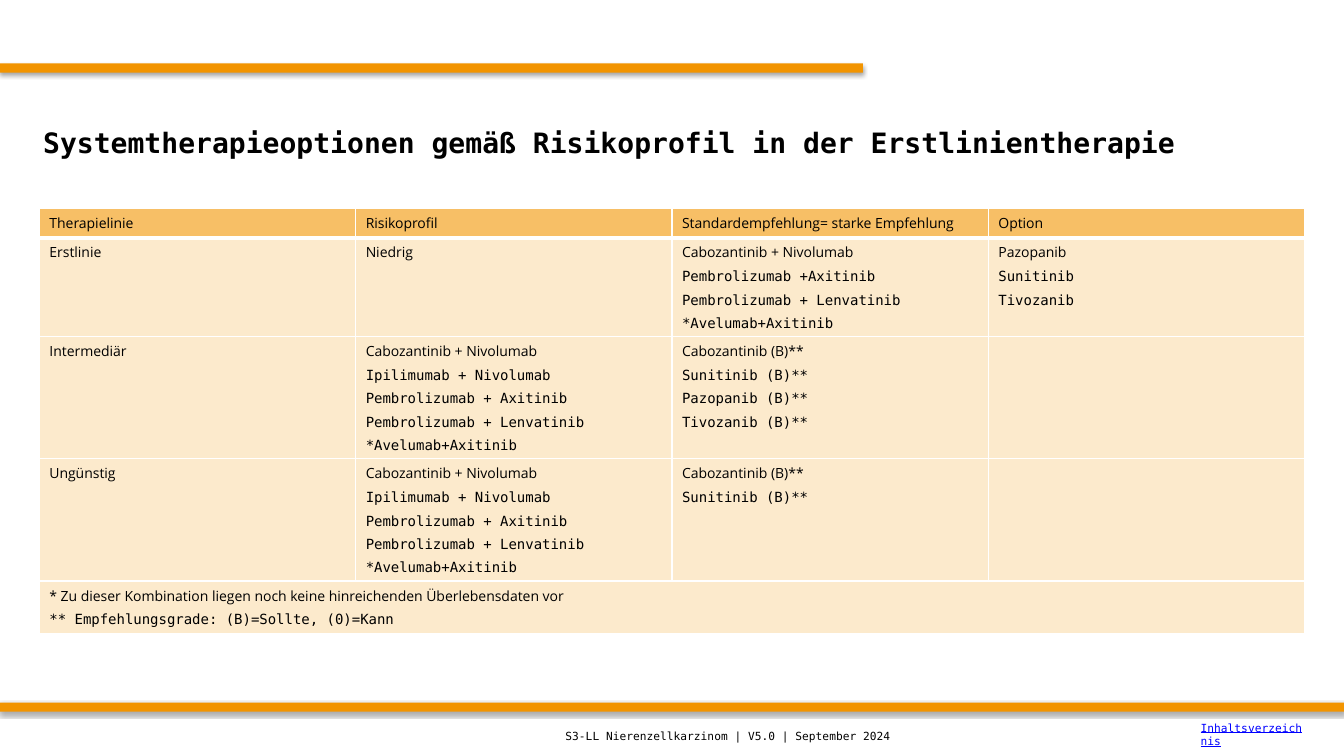
"""Build the slide on first-line systemic therapy options by risk profile."""
from dataclasses import dataclass

from lxml import etree
from pptx import Presentation
from pptx.dml.color import RGBColor
from pptx.enum.shapes import MSO_SHAPE
from pptx.enum.text import MSO_ANCHOR
from pptx.oxml.ns import qn
from pptx.util import Inches, Pt

RECT = MSO_SHAPE.RECTANGLE
MIDDLE = MSO_ANCHOR.MIDDLE


@dataclass(frozen=True)
class Theme:
    bar: str = "F29400"
    header: str = "F7BF66"
    body: str = "FCEACC"
    border: str = "FFFFFF"
    text: str = "000000"
    link: str = "0000FF"
    sans: str = "Open Sans"
    mono: str = "DejaVu Sans Mono"
    title_size: int = 20
    table_size: int = 10
    footer_size: int = 8


theme = Theme()


def add_run(p, text, font, size, color=theme.text):
    r = p.add_run()
    r.text = text
    r.font.name = font
    r.font.size = Pt(size)
    r.font.color.rgb = RGBColor.from_string(color)
    return r


def set_border(cell, side, width):
    ln = etree.SubElement(cell._tc.get_or_add_tcPr(), qn(f"a:{side}"), w=str(Pt(width)))
    fill = etree.SubElement(ln, qn("a:solidFill"))
    etree.SubElement(fill, qn("a:srgbClr"), val=theme.border)


prs = Presentation()
prs.slide_width = Inches(13.33)
prs.slide_height = Inches(7.5)
s = prs.slides.add_slide(prs.slide_layouts[6])

for top, width in [(0.63, 8.56), (6.97, 13.33)]:
    sp = s.shapes.add_shape(RECT, 0, Inches(top), Inches(width), Inches(0.09))
    sp.fill.solid()
    sp.fill.fore_color.rgb = RGBColor.from_string(theme.bar)
    sp.line.fill.background()
    sp.shadow.inherit = False
    effects = sp._element.spPr.find(qn("a:effectLst"))
    shadow = etree.SubElement(effects, qn("a:outerShdw"), blurRad=str(Pt(3.1)),
                              dist=str(Pt(1.8)), dir="5400000", rotWithShape="0")
    black = etree.SubElement(shadow, qn("a:srgbClr"), val=theme.text)
    etree.SubElement(black, qn("a:alpha"), val="35000")

labels = [
    ("Systemtherapieoptionen gemäß Risikoprofil in der Erstlinientherapie",
     (0.33, 0.83, 12.67, 1.17), theme.title_size, theme.text, True, False),
    ("S3-LL Nierenzellkarzinom | V5.0 | September 2024",
     (5.51, 7.11, 5.51, 0.39), theme.footer_size, theme.text, False, False),
    ("Inhaltsverzeichnis",
     (11.81, 7.09, 1.22, 0.39), theme.footer_size, theme.link, False, True),
]
for text, box, size, color, bold, underline in labels:
    tf = s.shapes.add_textbox(*map(Inches, box)).text_frame
    tf.word_wrap = True
    tf.vertical_anchor = MIDDLE
    r = add_run(tf.paragraphs[0], text, theme.mono, size, color)
    r.font.bold = bold
    r.font.underline = underline

combinations = ["Cabozantinib + Nivolumab", "Ipilimumab + Nivolumab",
                "Pembrolizumab + Axitinib", "Pembrolizumab + Lenvatinib",
                "*Avelumab+Axitinib"]
rows = [
    [["Therapielinie"], ["Risikoprofil"],
     ["Standardempfehlung= starke Empfehlung"], ["Option"]],
    [["Erstlinie"], ["Niedrig"],
     ["Cabozantinib + Nivolumab", "Pembrolizumab +Axitinib",
      "Pembrolizumab + Lenvatinib", "*Avelumab+Axitinib"],
     ["Pazopanib", "Sunitinib", "Tivozanib"]],
    [["Intermediär"], combinations,
     ["Cabozantinib (B)**", "Sunitinib (B)**", "Pazopanib (B)**", "Tivozanib (B)**"], []],
    [["Ungünstig"], combinations, ["Cabozantinib (B)**", "Sunitinib (B)**"], []],
    [["* Zu dieser Kombination liegen noch keine hinreichenden Überlebensdaten vor",
      "** Empfehlungsgrade: (B)=Sollte, (0)=Kann"], [], [], []],
]
row_heights = [0.29, 0.98, 1.21, 1.21, 0.52]

table = s.shapes.add_table(len(rows), 4, Inches(0.39), Inches(2.07),
                           Inches(12.55), Inches(sum(row_heights))).table
for row, height in zip(table.rows, row_heights):
    row.height = Inches(height)

for i, row in enumerate(rows):
    for j, lines in enumerate(row):
        cell = table.cell(i, j)
        set_border(cell, "lnL", 1)
        set_border(cell, "lnR", 1)
        set_border(cell, "lnT", 3 if i == 1 else 1)
        set_border(cell, "lnB", 3 if i == 0 else 1)
        cell.fill.solid()
        cell.fill.fore_color.rgb = RGBColor.from_string(theme.body if i else theme.header)
        tf = cell.text_frame
        for k, line in enumerate(lines):
            p = tf.add_paragraph() if k else tf.paragraphs[0]
            p.space_after = Pt(5)
            r = add_run(p, line, theme.mono if k else theme.sans, theme.table_size)
            r.font.bold = False

table.cell(4, 0).merge(table.cell(4, 3))

prs.save("out.pptx")
